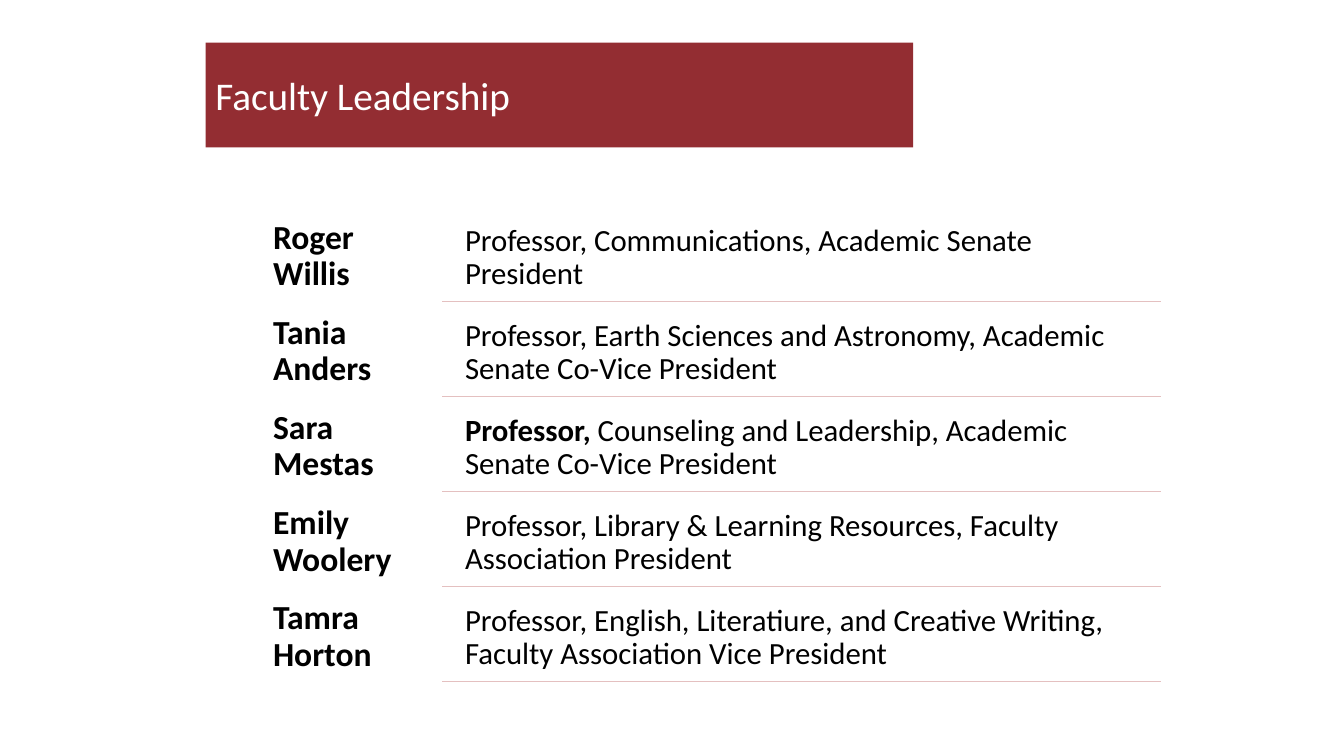
"""Build the Faculty Leadership slide: a title band and five people with their roles."""
from lxml.etree import SubElement
from pptx import Presentation
from pptx.dml.color import RGBColor
from pptx.enum.shapes import MSO_CONNECTOR, MSO_SHAPE
from pptx.enum.text import MSO_ANCHOR, PP_ALIGN
from pptx.oxml.ns import qn
from pptx.util import Pt

TITLE = "Faculty Leadership"
LEADERS = [
    ("Roger Willis", "", "Professor, Communications, Academic Senate President"),
    ("Tania Anders", "", "Professor, Earth Sciences and Astronomy, Academic Senate Co-Vice President"),
    ("Sara Mestas", "Professor, ", "Counseling and Leadership, Academic Senate Co-Vice President"),
    ("Emily Woolery", "", "Professor, Library & Learning Resources, Faculty Association President"),
    ("Tamra Horton", "", "Professor, English, Literatiure, and Creative Writing, "
                         "Faculty Association Vice President"),
]

FONT = "Calibri"
MAROON = RGBColor(0x93, 0x2D, 0x32)
ROSE = RGBColor(0xE4, 0xC0, 0xC0)
BLACK = RGBColor(0, 0, 0)
WHITE = RGBColor(255, 255, 255)

ROW_TOP, ROW_PITCH = 150.4, 67.88
NAME_LEFT, NAME_WIDTH, NAME_HEIGHT = 188, 128, 67.7
ROLE_LEFT, ROLE_WIDTH, ROLE_HEIGHT = 325.6, 504, 61.9
ROLE_DROP, RULE_DROP = 3.4, 64.9
RULE_LEFT, RULE_RIGHT = 316, 829.5


def style(paragraph, size, color, bold=None):
    font = paragraph.font
    font.name, font.size, font.bold = FONT, Pt(size), bold
    font.color.rgb = color


def add_cell(slide, left, top, width, height, inset):
    frame = slide.shapes.add_textbox(Pt(left), Pt(top), Pt(width), Pt(height)).text_frame
    frame.word_wrap = True
    frame.margin_left = frame.margin_right = Pt(inset)
    frame.margin_top = frame.margin_bottom = Pt(inset)
    paragraph = frame.paragraphs[0]
    paragraph.line_spacing = 0.9
    return paragraph


def add_title(slide):
    band = slide.shapes.add_shape(MSO_SHAPE.RECTANGLE, Pt(146.8), Pt(30.4), Pt(505.5), Pt(75))
    band.shadow.inherit = False
    band.fill.solid()
    band.fill.fore_color.rgb = MAROON
    band.line.fill.background()
    band.text_frame.vertical_anchor = MSO_ANCHOR.MIDDLE
    heading = band.text_frame.paragraphs[0]
    heading.text = TITLE
    heading.alignment = PP_ALIGN.LEFT
    style(heading, 28, WHITE)


def add_leader(slide, top, name, lead, role):
    name_line = add_cell(slide, NAME_LEFT, top, NAME_WIDTH, NAME_HEIGHT, 7.2)
    name_line.text = name
    style(name_line, 24, BLACK, True)

    role_line = add_cell(slide, ROLE_LEFT, top + ROLE_DROP, ROLE_WIDTH, ROLE_HEIGHT, 6.6)
    if lead:
        lead_run = role_line.add_run()
        lead_run.text = lead
        lead_run.font.bold = True
    role_line.add_run().text = role
    style(role_line, 22, BLACK)

    rule_y = Pt(top + RULE_DROP)
    rule = slide.shapes.add_connector(
        MSO_CONNECTOR.STRAIGHT, Pt(RULE_LEFT), rule_y, Pt(RULE_RIGHT), rule_y)
    rule.line.color.rgb = ROSE
    rule.line.width = Pt(1)
    SubElement(rule._element.spPr, qn("a:effectLst"))


def main():
    deck = Presentation()
    deck.slide_width, deck.slide_height = Pt(960), Pt(540)
    slide = deck.slides.add_slide(deck.slide_layouts[6])
    add_title(slide)
    for row, leader in enumerate(LEADERS):
        add_leader(slide, ROW_TOP + row * ROW_PITCH, *leader)
    deck.save("out.pptx")


if __name__ == "__main__":
    main()
